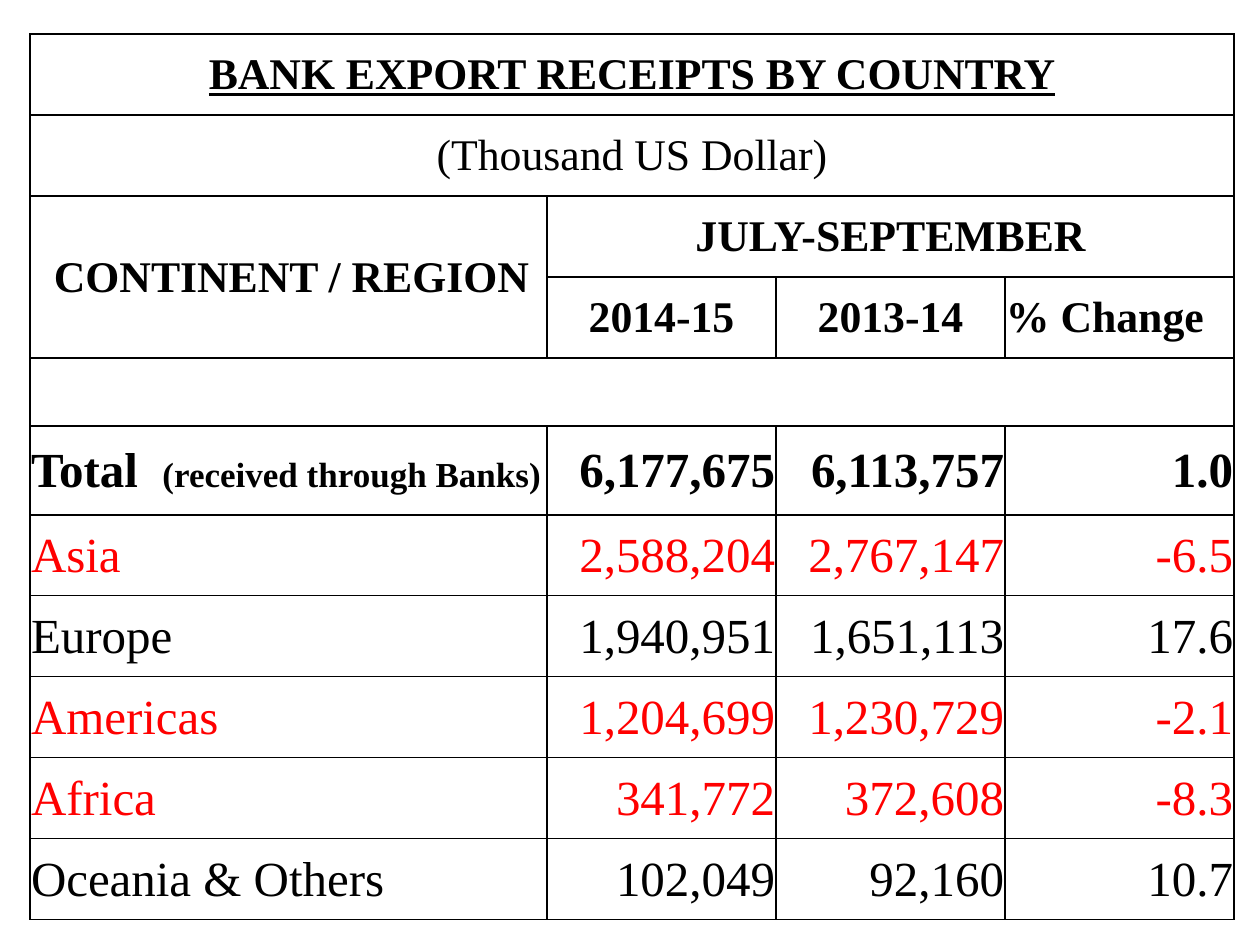
from lxml import etree
from pptx import Presentation
from pptx.dml.color import RGBColor
from pptx.enum.text import MSO_ANCHOR, PP_ALIGN
from pptx.oxml.ns import qn
from pptx.util import Emu, Pt

LEFT, CENTER, RIGHT = PP_ALIGN.LEFT, PP_ALIGN.CENTER, PP_ALIGN.RIGHT
MIDDLE = MSO_ANCHOR.MIDDLE
EMU_PER_PX = 914400 / 126
FONT = "Times New Roman"
BLACK, RED = "000000", "FF0000"
COLUMN_WIDTHS = [517, 229, 229, 229]
ROW_HEIGHTS = [81] * 4 + [68, 89] + [81] * 5
GAP_ROW = 4


def px(length):
    return Emu(round(length * EMU_PER_PX))


def write(cell, runs, align, color=BLACK, bold=True, underline=False):
    para = cell.text_frame.paragraphs[0]
    para.alignment = align
    for text, size in runs:
        span = para.add_run()
        span.text = text
        font = span.font
        font.name, font.size = FONT, Pt(size)
        font.bold, font.underline = bold, underline
        font.color.rgb = RGBColor.from_string(color)


deck = Presentation()
deck.slide_width, deck.slide_height = px(1260), px(945)
page = deck.slides.add_slide(deck.slide_layouts[6])
frame = page.shapes.add_table(
    len(ROW_HEIGHTS), len(COLUMN_WIDTHS), px(30), px(34),
    px(sum(COLUMN_WIDTHS)), px(sum(ROW_HEIGHTS)))
table = frame.table
table.first_row = table.horz_banding = False
for column, width in zip(table.columns, COLUMN_WIDTHS):
    column.width = px(width)
for row, height in zip(table.rows, ROW_HEIGHTS):
    row.height = px(height)

last_column = len(COLUMN_WIDTHS) - 1
for r in range(len(ROW_HEIGHTS)):
    for c in range(len(COLUMN_WIDTHS)):
        cell = table.cell(r, c)
        cell.vertical_anchor = MIDDLE
        cell.margin_left = cell.margin_right = cell.margin_top = px(1)
        cell.margin_bottom = 0
        cell.fill.background()
        properties = cell._tc.get_or_add_tcPr()
        hidden = set()
        if r == GAP_ROW:
            if c > 0:
                hidden.add("lnL")
            if c < last_column:
                hidden.add("lnR")
        for position, side in enumerate(["lnL", "lnR", "lnT", "lnB"]):
            line = etree.Element(qn("a:" + side), w=str(Pt(1)))
            if side in hidden:
                etree.SubElement(line, qn("a:noFill"))
            else:
                fill = etree.SubElement(line, qn("a:solidFill"))
                etree.SubElement(fill, qn("a:srgbClr"), val=BLACK)
            properties.insert(position, line)

for top, left, bottom, right in [(0, 0, 0, 3), (1, 0, 1, 3), (2, 0, 3, 0), (2, 1, 2, 3)]:
    table.cell(top, left).merge(table.cell(bottom, right))

write(table.cell(0, 0), [("BANK EXPORT RECEIPTS BY COUNTRY", 25)], CENTER, underline=True)
write(table.cell(1, 0), [("(Thousand US Dollar)", 25)], CENTER, bold=False)
table.cell(2, 0).margin_left = px(24)
headings = [
    (2, 0, "CONTINENT / REGION", LEFT),
    (2, 1, "JULY-SEPTEMBER", CENTER),
    (3, 1, "2014-15", CENTER),
    (3, 2, "2013-14", CENTER),
    (3, 3, "% Change", LEFT),
]
for r, c, text, align in headings:
    write(table.cell(r, c), [(text, 25)], align)

receipts = [
    ([("Total  ", 28), ("(received through Banks)", 20)], "6,177,675", "6,113,757", "1.0"),
    ([("Asia", 28)], "2,588,204", "2,767,147", "-6.5"),
    ([("Europe", 28)], "1,940,951", "1,651,113", "17.6"),
    ([("Americas", 28)], "1,204,699", "1,230,729", "-2.1"),
    ([("Africa", 28)], "341,772", "372,608", "-8.3"),
    ([("Oceania & Others", 28)], "102,049", "92,160", "10.7"),
]
total_row = GAP_ROW + 1
for r, (region, *values) in enumerate(receipts, total_row):
    color = RED if values[-1].startswith("-") else BLACK
    bold = r == total_row
    write(table.cell(r, 0), region, LEFT, color, bold)
    for c, value in enumerate(values, 1):
        write(table.cell(r, c), [(value, 28)], RIGHT, color, bold)

deck.save("out.pptx")
